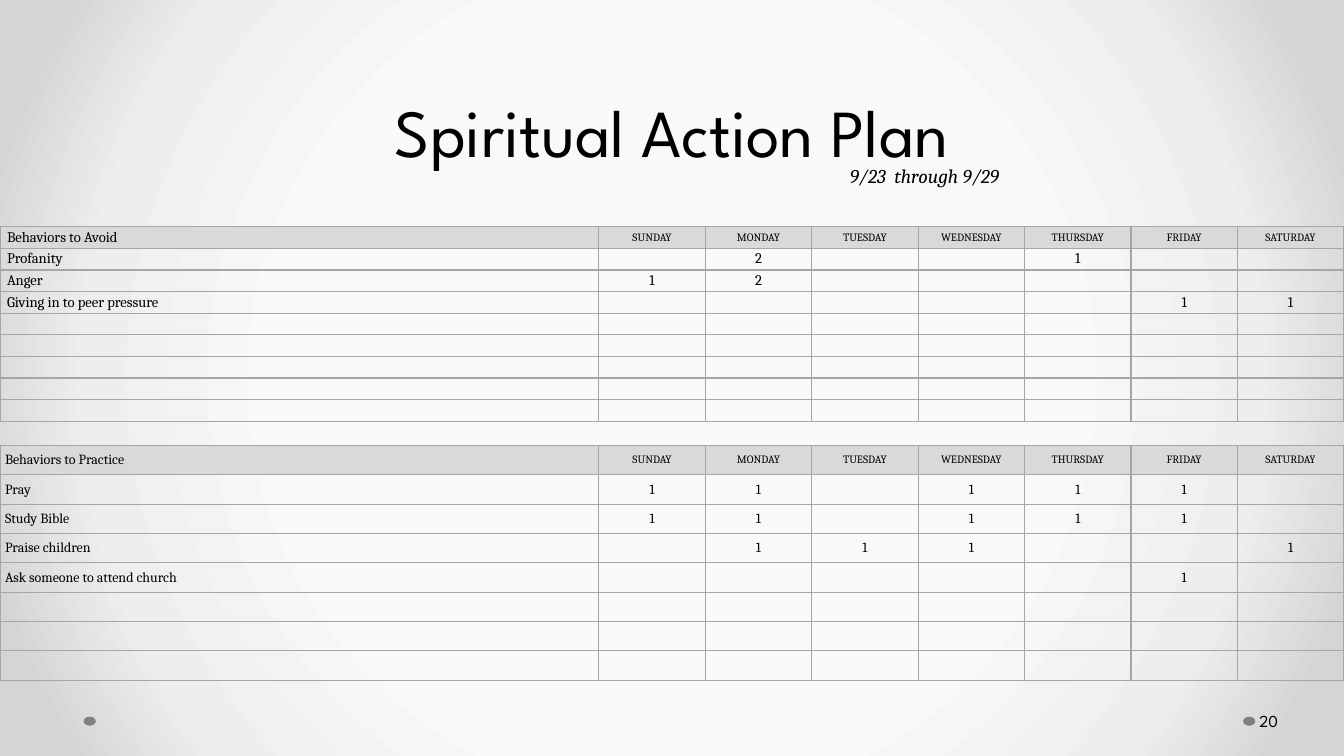
import dataclasses

import lxml.etree
import pptx
import pptx.dml.color
import pptx.enum.shapes
import pptx.enum.text
import pptx.oxml
import pptx.oxml.ns
import pptx.util

Inches = pptx.util.Inches
Pt = pptx.util.Pt
Align = pptx.enum.text.PP_ALIGN
Anchor = pptx.enum.text.MSO_ANCHOR
qn = pptx.oxml.ns.qn


@dataclasses.dataclass(frozen=True)
class Theme:
    heading_font: str = "League Spartan"
    body_font: str = "Cambria"
    ink: str = "000000"
    header_fill: str = "D9D9D9"
    rule: str = "A6A6A6"
    dot: str = "808080"
    glow: tuple = ((50, "F9F9F9"), (76, "EEEEEE"), (92, "D5D5D5"))
    title_size: float = 48
    date_size: float = 14
    number_size: float = 12
    day_size: float = 8
    avoid_size: float = 10.5
    practice_size: float = 10
    rule_width: float = 1


THEME = Theme()
PAGE_WIDTH, PAGE_HEIGHT = 13.33, 7.5
LABEL_WIDTH = 5.94
DAYS = ["SUNDAY", "MONDAY", "TUESDAY", "WEDNESDAY", "THURSDAY", "FRIDAY", "SATURDAY"]

# Each behavior has one tally per day, Sunday to Saturday; 0 leaves the cell empty.
AVOID = [
    ("Profanity", (0, 2, 0, 0, 1, 0, 0)),
    ("Anger", (1, 2, 0, 0, 0, 0, 0)),
    ("Giving in to peer pressure", (0, 0, 0, 0, 0, 1, 1)),
]
PRACTICE = [
    ("Pray", (1, 1, 0, 1, 1, 1, 0)),
    ("Study Bible", (1, 1, 0, 1, 1, 1, 0)),
    ("Praise children", (0, 1, 1, 1, 0, 0, 1)),
    ("Ask someone to attend church", (0, 0, 0, 0, 0, 1, 0)),
]


def rgb(value):
    return pptx.dml.color.RGBColor.from_string(value)


def style_span(span, font, size, italic=None):
    span.font.name = font
    span.font.size = Pt(size)
    span.font.italic = italic
    span.font.color.rgb = rgb(THEME.ink)


def paint_background(page):
    """Fill the page with a radial gradient, lightest in the middle."""
    stops = "".join(
        f'<a:gs pos="{position * 1000}"><a:srgbClr val="{color}"/></a:gs>'
        for position, color in THEME.glow
    )
    background = pptx.oxml.parse_xml(
        f'<p:bg {pptx.oxml.ns.nsdecls("p", "a")}><p:bgPr><a:gradFill rotWithShape="1">'
        f'<a:gsLst>{stops}</a:gsLst><a:path path="circle">'
        '<a:fillToRect l="50000" t="50000" r="50000" b="50000"/></a:path>'
        "</a:gradFill><a:effectLst/></p:bgPr></p:bg>"
    )
    page.element.find(qn("p:cSld")).insert(0, background)


def add_text(page, box, text, font, size, anchor=Anchor.MIDDLE, wrap=True, italic=None):
    frame = page.shapes.add_textbox(*map(Inches, box)).text_frame
    frame.word_wrap = wrap
    frame.vertical_anchor = anchor
    frame.text = text
    para = frame.paragraphs[0]
    style_span(para.runs[0], font, size, italic)
    return frame


def add_heading(page, box):
    left, top, width, height = box
    title = add_text(page, box, "Spiritual Action Plan", THEME.heading_font,
                     THEME.title_size, Anchor.BOTTOM).paragraphs[0]
    title.alignment = Align.CENTER
    title.line_spacing = Pt(THEME.title_size)
    add_text(page, (left + 8.33, top + height - 0.45, 1.8, 0.88), "9/23  through 9/29",
             THEME.body_font, THEME.date_size, wrap=False, italic=True)


def add_footer(page, box):
    """Place a dot at each side and the page number after the right one."""
    left, top, width, height = box
    for dot_left in (left, left + 11.5):
        dot = page.shapes.add_shape(
            pptx.enum.shapes.MSO_SHAPE.OVAL,
            *map(Inches, (dot_left, top + 0.16, 0.12, 0.09)))
        dot.shadow.inherit = False
        dot.fill.solid()
        dot.fill.fore_color.rgb = rgb(THEME.dot)
        dot.line.fill.background()
    number_left = left + 11.63
    number = add_text(page, (number_left, top, left + width - number_left, height), "20",
                      THEME.heading_font, THEME.number_size)
    number.margin_left = Inches(0.03)
    number.margin_right = Inches(0.05)


def rule_cell(cell):
    """Draw the four borders of a cell."""
    properties = cell._tc.get_or_add_tcPr()
    for index, side in enumerate(("lnL", "lnR", "lnT", "lnB")):
        line = pptx.oxml.parse_xml(
            f'<a:{side} {pptx.oxml.ns.nsdecls("a")} w="{Pt(THEME.rule_width)}">'
            f'<a:solidFill><a:srgbClr val="{THEME.rule}"/></a:solidFill></a:{side}>'
        )
        properties.insert(index, line)


def fill_cell(cell, text, size, centered, inset, header):
    cell.margin_left = cell.margin_right = Inches(inset)
    cell.margin_top = cell.margin_bottom = 0
    cell.vertical_anchor = Anchor.MIDDLE
    if header:
        cell.fill.solid()
        cell.fill.fore_color.rgb = rgb(THEME.header_fill)
    else:
        cell.fill.background()
    rule_cell(cell)
    para = cell.text_frame.paragraphs[0]
    para.alignment = Align.CENTER if centered else Align.LEFT
    if text:
        para.text = text
        para.space_before = para.space_after = Pt(4)
        style_span(para.runs[0], THEME.body_font, size)
    else:
        # An empty cell needs its own type size, or its row grows.
        end = lxml.etree.SubElement(para._p, qn("a:endParaRPr"))
        end.set("sz", str(int(size * 100)))


def add_tally(page, box, heading, behaviors, row_count, size, inset, tight_inset):
    left, top, width, height = box
    table = page.shapes.add_table(row_count, len(DAYS) + 1, *map(Inches, box)).table
    table.first_row = table.horz_banding = False
    for index, column in enumerate(table.columns):
        column.width = Inches((width - LABEL_WIDTH) / len(DAYS) if index else LABEL_WIDTH)
    for row in table.rows:
        row.height = Inches(height / row_count)

    lines = [[heading, *DAYS]]
    lines += [[name, *(str(count or "") for count in counts)] for name, counts in behaviors]
    lines += [[""] * (len(DAYS) + 1)] * (row_count - len(lines))
    for row_index, line in enumerate(lines):
        for column_index, text in enumerate(line):
            header = row_index == 0
            is_day = column_index > 0
            fill_cell(table.cell(row_index, column_index), text,
                      THEME.day_size if header and is_day else size, is_day,
                      tight_inset if column_index > 1 else inset, header)


def main():
    deck = pptx.Presentation()
    deck.slide_width = Inches(PAGE_WIDTH)
    deck.slide_height = Inches(PAGE_HEIGHT)
    page = deck.slides.add_slide(deck.slide_layouts[6])
    paint_background(page)
    add_heading(page, (0, 0, PAGE_WIDTH, 1.75))
    add_tally(page, (0, 2.25, PAGE_WIDTH, 1.93), "Behaviors to Avoid", AVOID, 9,
              THEME.avoid_size, 0.07, 0.02)
    add_tally(page, (0, 4.42, PAGE_WIDTH, 2.33), "Behaviors to Practice", PRACTICE, 8,
              THEME.practice_size, 0.05, 0.01)
    add_footer(page, (0.83, 6.95, 12.45, 0.4))
    deck.save("out.pptx")


if __name__ == "__main__":
    main()
